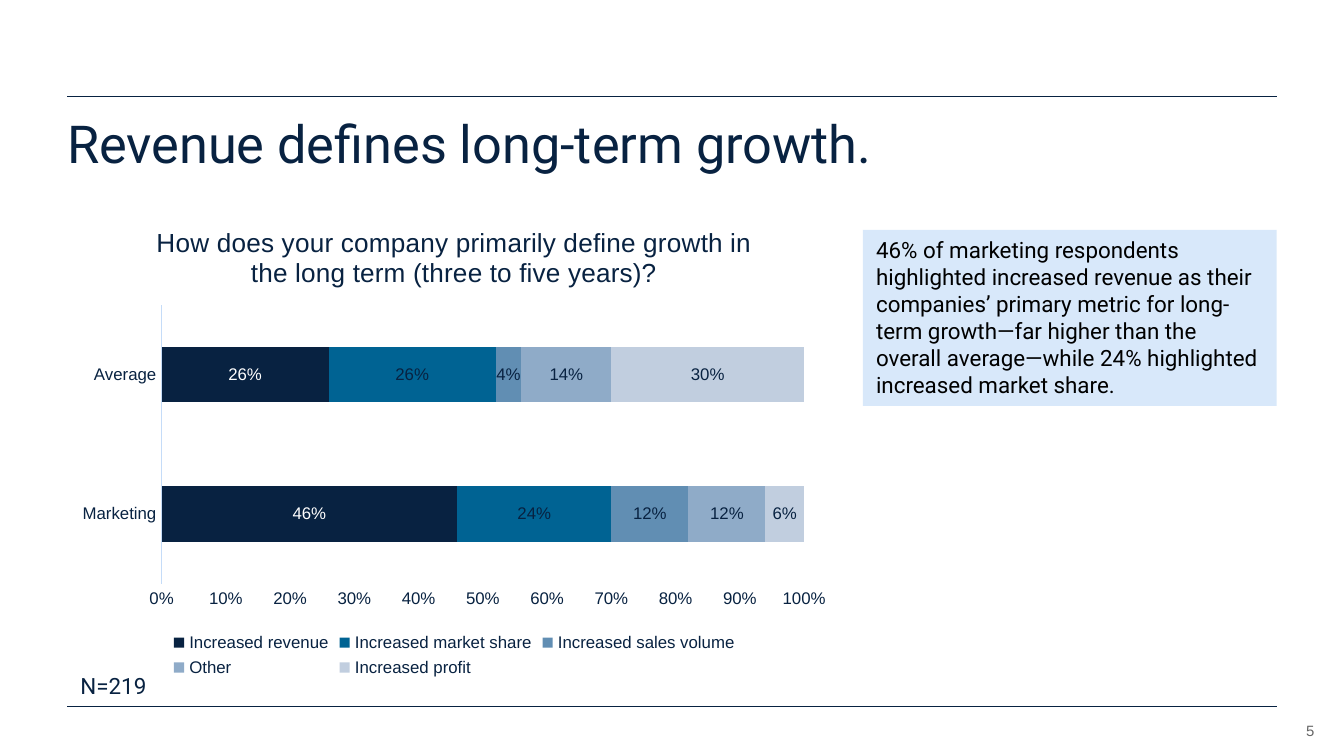
from lxml import etree
from pptx import Presentation
from pptx.chart.data import CategoryChartData
from pptx.dml.color import RGBColor
from pptx.enum import chart as charts, shapes, text
from pptx.oxml import parse_xml
from pptx.oxml.ns import nsdecls, qn
from pptx.util import Inches, Pt

NAVY = RGBColor(0x08, 0x22, 0x41)
BLUE = RGBColor(0x00, 0x63, 0x93)
STEEL = RGBColor(0x61, 0x8E, 0xB3)
MIST = RGBColor(0x8F, 0xAB, 0xC8)
PALE = RGBColor(0xC1, 0xCE, 0xDF)
AXIS_BLUE = RGBColor(0xC5, 0xDC, 0xF8)
CALLOUT_BLUE = RGBColor(0xD8, 0xE8, 0xFA)
GRAY = RGBColor(0x66, 0x66, 0x66)
BLACK = RGBColor(0, 0, 0)
WHITE = RGBColor(0xFF, 0xFF, 0xFF)

LEFT, RIGHT = 0.5, 9.5
CATEGORIES = ["Marketing", "Average"]
SERIES = [  # name, values, fill, label colour
    ("Increased revenue", (0.46, 0.26), NAVY, WHITE),
    ("Increased market share", (0.24, 0.26), BLUE, NAVY),
    ("Increased sales volume", (0.12, 0.04), STEEL, NAVY),
    ("Other", (0.12, 0.14), MIST, NAVY),
    ("Increased profit", (0.06, 0.3), PALE, NAVY),
]
QUESTION = "How does your company primarily define growth in the long term (three to five years)?"
FINDING = (
    "46% of marketing respondents highlighted increased revenue as their "
    "companies’ primary metric for long-term growth—far higher than the "
    "overall average—while 24% highlighted increased market share."
)


def set_font(font, size, color, name="Arial"):
    font.size = Pt(size)
    font.name = name
    font.bold = False
    font.color.rgb = color


def add_rule(slide, y):
    rule = slide.shapes.add_connector(
        shapes.MSO_CONNECTOR.STRAIGHT, Inches(LEFT), Inches(y), Inches(RIGHT), Inches(y))
    rule.line.color.rgb = NAVY
    rule.line.width = Pt(0.5)
    etree.SubElement(rule.element.spPr, qn("a:effectLst"))


def write_text(shape, content, size, color, font="Roboto"):
    shape.text_frame.word_wrap = True
    paragraph = shape.text_frame.paragraphs[0]
    paragraph.text = content
    paragraph.alignment = text.PP_ALIGN.LEFT
    set_font(paragraph.font, size, color, font)
    return paragraph


def add_text(slide, box, content, size, color, font="Roboto", inset=True):
    shape = slide.shapes.add_textbox(*map(Inches, box))
    frame = shape.text_frame
    if not inset:
        frame.margin_left = frame.margin_top = frame.margin_right = frame.margin_bottom = 0
    return shape, write_text(shape, content, size, color, font)


def add_callout(slide, box, content):
    shape = slide.shapes.add_shape(shapes.MSO_SHAPE.RECTANGLE, *map(Inches, box))
    shape.shadow.inherit = False
    shape.fill.solid()
    shape.fill.fore_color.rgb = CALLOUT_BLUE
    shape.line.fill.background()
    shape.text_frame.vertical_anchor = text.MSO_ANCHOR.TOP
    write_text(shape, content, 12, BLACK)


def place_plot(chart, x, y, width, height):
    """Fix the inner plot area, in fractions of the chart."""
    plot_area = chart.element.find(".//" + qn("c:plotArea"))
    for layout in plot_area.findall(qn("c:layout")):
        plot_area.remove(layout)
    sizes = "".join(f'<c:{tag} val="{value}"/>' for tag, value in
                    (("x", x), ("y", y), ("w", width), ("h", height)))
    plot_area.insert(0, parse_xml(
        f'<c:layout {nsdecls("c")}><c:manualLayout><c:layoutTarget val="inner"/>'
        f'<c:xMode val="edge"/><c:yMode val="edge"/>{sizes}</c:manualLayout></c:layout>'))


def style_axis(axis):
    axis.has_major_gridlines = False
    axis.major_tick_mark = axis.minor_tick_mark = charts.XL_TICK_MARK.NONE
    set_font(axis.tick_labels.font, 9, NAVY)


def style_series(series, fill, label_color):
    series.format.fill.solid()
    series.format.fill.fore_color.rgb = fill
    labels = series.data_labels
    labels.show_value = True
    labels.number_format = "0%"
    labels.number_format_is_linked = False
    labels.position = charts.XL_LABEL_POSITION.CENTER
    set_font(labels.font, 9, label_color)


def add_growth_chart(slide, box):
    data = CategoryChartData(number_format="0%")
    data.categories = CATEGORIES
    for name, values, _, _ in SERIES:
        data.add_series(name, values)
    chart = slide.shapes.add_chart(
        charts.XL_CHART_TYPE.BAR_STACKED_100, *map(Inches, box), data).chart
    set_font(chart.font, 10, NAVY)

    chart.has_title = True
    title = chart.chart_title
    title.include_in_layout = False
    title.text_frame.text = QUESTION
    set_font(title.text_frame.paragraphs[0].font, 14, NAVY)

    chart.has_legend = True
    chart.legend.position = charts.XL_LEGEND_POSITION.BOTTOM
    chart.legend.include_in_layout = False
    set_font(chart.legend.font, 9, NAVY)

    style_axis(chart.category_axis)
    chart.category_axis.format.line.color.rgb = AXIS_BLUE
    chart.category_axis.format.line.width = Pt(0.75)
    style_axis(chart.value_axis)
    chart.value_axis.format.line.fill.background()
    chart.value_axis.minimum_scale, chart.value_axis.maximum_scale = 0, 1
    chart.value_axis.major_unit = 0.1
    chart.value_axis.tick_labels.number_format = "0%"
    chart.value_axis.tick_labels.number_format_is_linked = False

    plot = chart.plots[0]
    plot.gap_width, plot.overlap = 150, 100
    plot.vary_by_categories = False
    for series, (_, _, fill, label_color) in zip(plot.series, SERIES):
        style_series(series, fill, label_color)
    place_plot(chart, 0.122, 0.21, 0.83, 0.583)


def main():
    presentation = Presentation()
    presentation.slide_width = Inches(10)
    presentation.slide_height = presentation.slide_width * 9 // 16
    slide = presentation.slides.add_slide(presentation.slide_layouts[6])

    for y in (0.72, 5.26):
        add_rule(slide, y)
    number, paragraph = add_text(
        slide, (9.31, 5.32, 0.47, 0.18), "5", 8, GRAY, "Arial", inset=False)
    number.text_frame.vertical_anchor = text.MSO_ANCHOR.BOTTOM
    paragraph.alignment = text.PP_ALIGN.RIGHT
    _, paragraph = add_text(slide, (LEFT, 0.88, RIGHT - LEFT, 0.55),
                            "Revenue defines long-term growth.", 28, NAVY, inset=False)
    paragraph.line_spacing = 0.9
    add_callout(slide, (6.42, 1.71, 3.08, 1.31), FINDING)
    add_text(slide, (LEFT, 4.95, 1.19, 0.3), "N=219", 12, NAVY)
    add_growth_chart(slide, (LEFT, 1.52, 5.76, 3.56))
    presentation.save("out.pptx")


if __name__ == "__main__":
    main()
